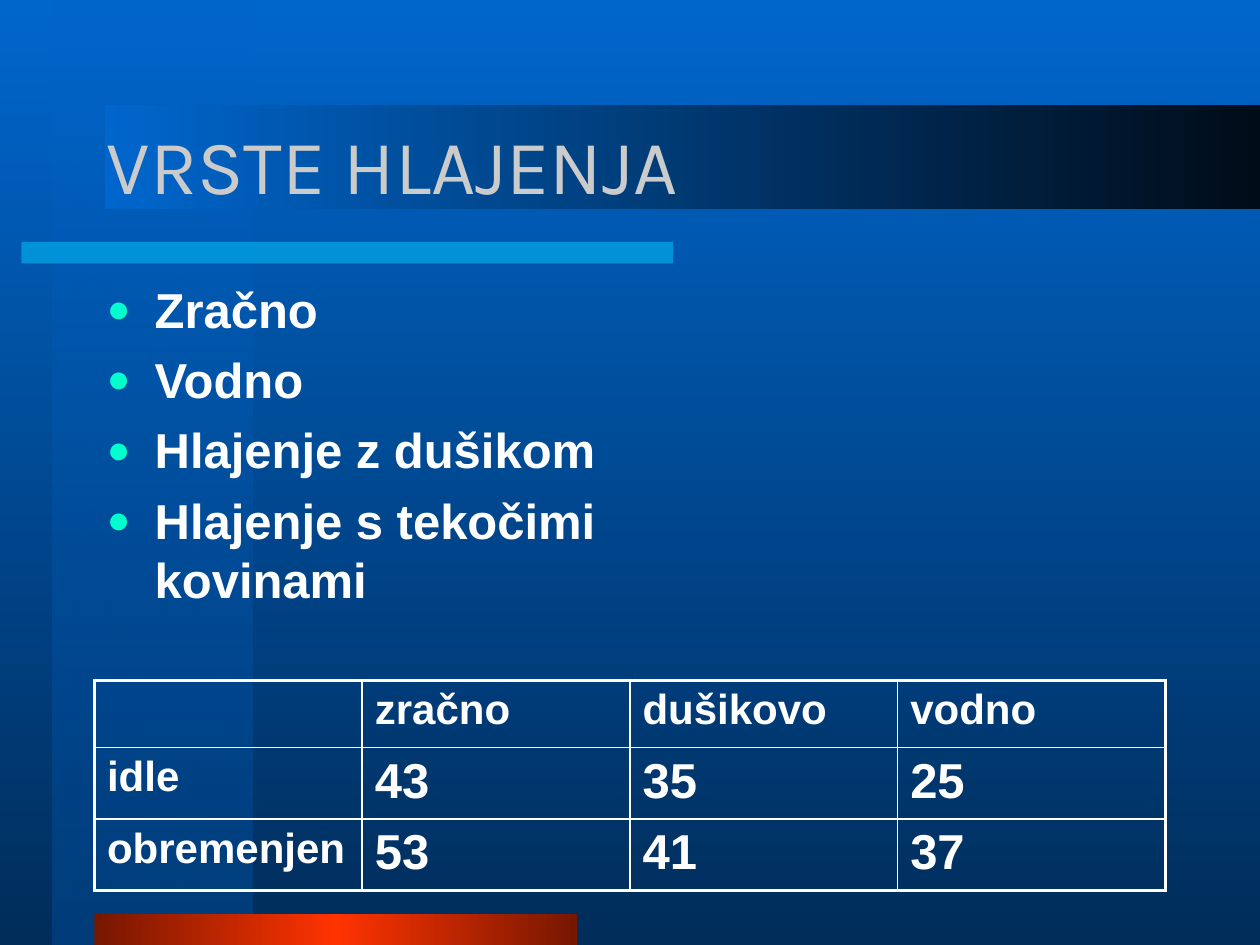
from lxml import etree
from pptx import Presentation
from pptx import util as u
from pptx.dml.color import RGBColor
from pptx.enum import shapes, text
from pptx.oxml import ns

WHITE = RGBColor(0xFF, 0xFF, 0xFF)
SILVER = RGBColor(0xCB, 0xCB, 0xCB)
BLUE = RGBColor(0x00, 0x66, 0xCC)
NAVY = RGBColor(0x00, 0x2D, 0x5A)
SIDE_BLUE = RGBColor(0x00, 0x3D, 0x7A)
NIGHT = RGBColor(0x00, 0x0C, 0x18)
CYAN = RGBColor(0x00, 0xCC, 0xFF)
RED = RGBColor(0xFF, 0x33, 0x00)
MAROON = RGBColor(0x76, 0x17, 0x00)
MINT = RGBColor(0x00, 0xFF, 0xCC)

TITLE = {"size": u.Pt(44), "name": "Karla", "bold": False}
BODY = {"size": u.Pt(28), "name": "Arial", "bold": True}
LABEL = {**BODY, "size": u.Pt(24)}


def sub(parent, tag, **attrs):
    el = etree.SubElement(parent, ns.qn(tag))
    for key, value in attrs.items():
        el.set(key, str(value))
    return el


class Deck:
    def __init__(self, width, height):
        self.prs = Presentation()
        self.prs.slide_width, self.prs.slide_height = u.Inches(width), u.Inches(height)
        self.slide = self.prs.slides.add_slide(self.prs.slide_layouts[6])

    def gradient(self, fill, element, colors, angle, alpha=None):
        fill.gradient()
        fill.gradient_angle = angle
        stops = next(element.iter(ns.qn("a:gsLst")))
        for gs in list(stops):
            stops.remove(gs)
        for i, color in enumerate(colors):
            gs = sub(stops, "a:gs", pos=100000 * i // (len(colors) - 1))
            clr = sub(gs, "a:srgbClr", val=color)
            if alpha and i == 0:
                sub(clr, "a:alpha", val=alpha * 1000)

    def background(self, colors, angle):
        self.gradient(self.slide.background.fill, self.slide.element, colors, angle)

    def bar(self, box, colors, angle=0, alpha=None):
        sp = self.slide.shapes.add_shape(shapes.MSO_SHAPE.RECTANGLE, *map(u.Inches, box))
        sp.shadow.inherit = False
        sp.line.fill.background()
        if len(colors) > 1:
            self.gradient(sp.fill, sp.element, colors, angle, alpha)
            return
        sp.fill.solid()
        sp.fill.fore_color.rgb = colors[0]
        if alpha:
            clr = next(sp.element.spPr.iter(ns.qn("a:srgbClr")))
            sub(clr, "a:alpha", val=alpha * 1000)

    def run(self, p, words, style, color=WHITE):
        r = p.add_run()
        r.text = words
        for key, value in style.items():
            setattr(r.font, key, value)
        r.font.color.rgb = color

    def frame(self, box, anchor):
        tf = self.slide.shapes.add_textbox(*map(u.Inches, box)).text_frame
        tf.word_wrap = True
        tf.vertical_anchor = anchor
        return tf

    def title(self, box, words):
        tf = self.frame(box, text.MSO_ANCHOR.MIDDLE)
        self.run(tf.paragraphs[0], words, TITLE, SILVER)

    def bullets(self, box, items):
        tf = self.frame(box, text.MSO_ANCHOR.TOP)
        for i, words in enumerate(items):
            p = tf.add_paragraph() if i else tf.paragraphs[0]
            p.space_before = u.Pt(6.5)
            self.run(p, words, BODY)
            pPr = p._p.get_or_add_pPr()
            pPr.set("marL", str(u.Inches(0.38)))
            pPr.set("indent", str(u.Inches(-0.38)))
            sub(sub(pPr, "a:buClr"), "a:srgbClr", val=MINT)
            sub(pPr, "a:buSzPct", val=80000)
            sub(pPr, "a:buFont", typeface="Arial")
            sub(pPr, "a:buChar", char="●")

    def borders(self, cell, outer):
        tcPr = cell._tc.get_or_add_tcPr()
        for side, is_outer in outer.items():
            ln = sub(tcPr, f"a:ln{side}", w=u.Pt(2.25 if is_outer else 1))
            sub(sub(ln, "a:solidFill"), "a:srgbClr", val=WHITE)

    def table(self, box, rows):
        n, m = len(rows), len(rows[0])
        tbl = self.slide.shapes.add_table(n, m, *map(u.Inches, box)).table
        tbl.first_row = tbl.horz_banding = False
        for i, row in enumerate(rows):
            for j, words in enumerate(row):
                cell = tbl.cell(i, j)
                self.borders(cell, {"L": j == 0, "R": j == m - 1,
                                    "T": i == 0, "B": i == n - 1})
                cell.fill.background()
                if words:
                    style = BODY if i and j else LABEL
                    self.run(cell.text_frame.paragraphs[0], words, style)

    def save(self):
        self.prs.save("out.pptx")


def main():
    deck = Deck(10, 7.5)
    deck.background([BLUE, NAVY], 270)
    deck.bar((0.42, 0, 1.58, 7.5), [BLUE, SIDE_BLUE], 270, alpha=50)
    deck.bar((0.17, 1.92, 5.17, 0.17), [CYAN], alpha=50)
    deck.bar((0.75, 7.25, 3.83, 0.25), [MAROON, RED, MAROON])
    deck.bar((0.83, 0.83, 9.17, 0.83), [BLUE, NIGHT])
    deck.title((0.75, 0.67, 8.5, 1.25), "VRSTE HLAJENJA")
    deck.bullets((0.75, 2.17, 4.17, 4.5), [
        "Zračno", "Vodno", "Hlajenje z dušikom", "Hlajenje s tekočimi kovinami"])
    deck.table((0.75, 5.4, 8.5, 1.6), [
        ["", "zračno", "dušikovo", "vodno"],
        ["idle", "43", "35", "25"],
        ["obremenjen", "53", "41", "37"]])
    deck.save()


if __name__ == "__main__":
    main()
